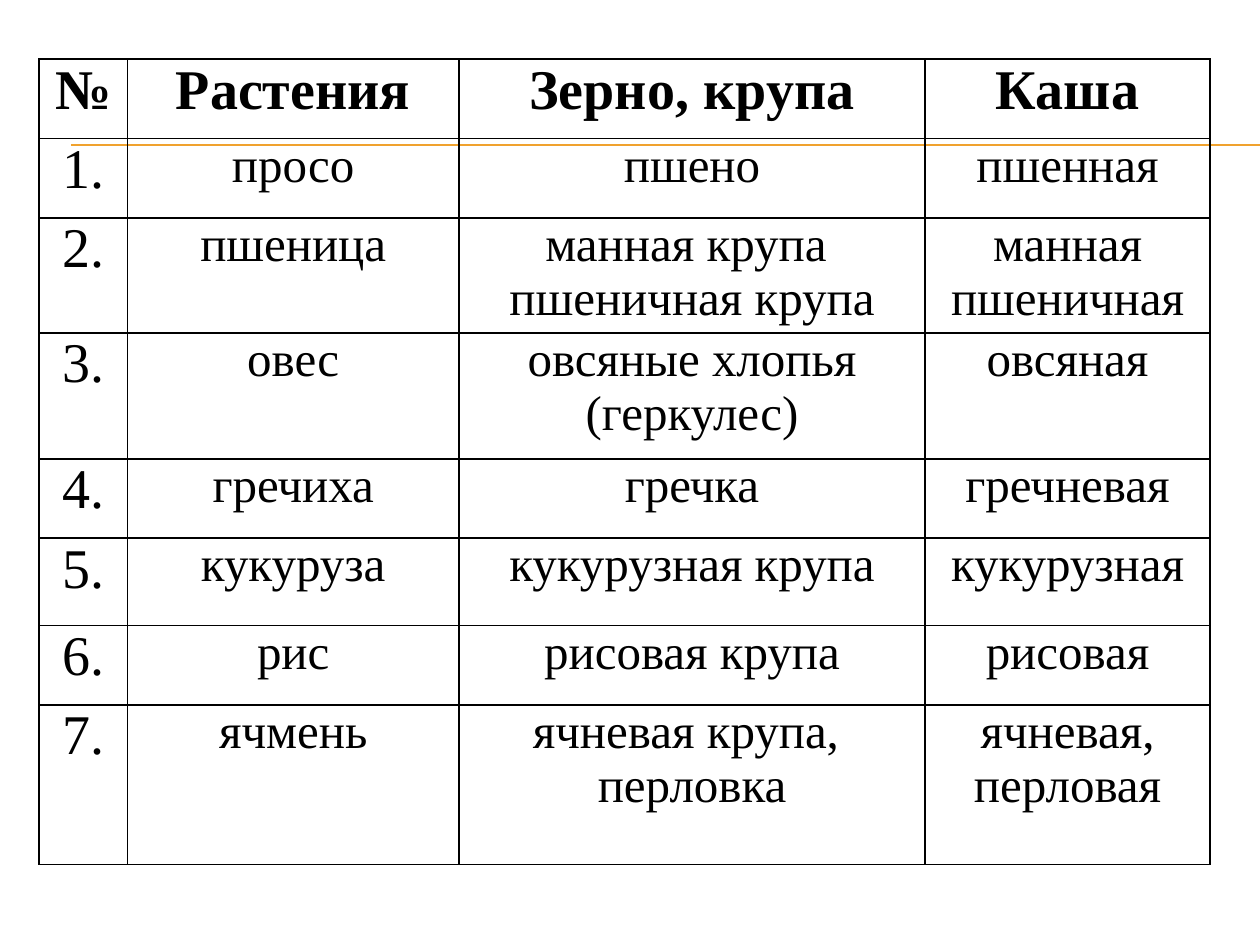
from lxml.etree import SubElement
from pptx import Presentation
from pptx.dml.color import RGBColor
from pptx.enum.shapes import MSO_CONNECTOR
from pptx.enum.text import PP_ALIGN
from pptx.oxml.ns import qn
from pptx.util import Cm, Pt

BLACK, ORANGE = "000000", "F0A22E"
COL_WIDTHS = [1.78, 6.68, 9.4, 5.74]
ROW_HEIGHTS = [1.6, 1.6, 2.32, 2.54, 1.6, 1.76, 1.6, 3.22]
HEADER = ["№", "Растения", "Зерно, крупа", "Каша"]
PLANTS = [
    ("просо", "пшено", "пшенная"),
    ("пшеница", "манная крупа \nпшеничная крупа", "манная\nпшеничная"),
    ("овес", "овсяные хлопья\n(геркулес)", "овсяная"),
    ("гречиха", "гречка", "гречневая"),
    ("кукуруза", "кукурузная крупа", "кукурузная"),
    ("рис", "рисовая крупа", "рисовая"),
    ("ячмень", "ячневая крупа, \nперловка", "ячневая,\nперловая"),
]


def color(hex_value):
    return RGBColor.from_string(hex_value)


def write_text(tf, text, size=28, bold=False, font="Times New Roman", fill=BLACK):
    """Write one centred paragraph for each line of the text."""
    for i, line in enumerate(text.split("\n")):
        p = tf.add_paragraph() if i else tf.paragraphs[0]
        p.alignment = PP_ALIGN.CENTER
        r = p.add_run()
        r.text = line
        r.font.name, r.font.size, r.font.bold = font, Pt(size), bold
        r.font.color.rgb = color(fill)


def set_borders(cell, hex_value=BLACK, width=1):
    tc_pr = cell._tc.get_or_add_tcPr()
    for side in ("lnL", "lnR", "lnT", "lnB"):
        ln = SubElement(tc_pr, qn(f"a:{side}"), w=str(Pt(width)))
        SubElement(SubElement(ln, qn("a:solidFill")), qn("a:srgbClr"), val=hex_value)


def add_rule(slide, left, top, width):
    """Draw the double decorative line."""
    for y in (top, top + 0.03):
        line = slide.shapes.add_connector(
            MSO_CONNECTOR.STRAIGHT, Cm(left), Cm(y), Cm(left + width), Cm(y))
        line.line.color.rgb = color(ORANGE)
        line.line.width = Pt(0.75)
        SubElement(line._element.spPr, qn("a:effectLst"))


def add_plant_table(slide, left, top):
    rows = [HEADER] + [(f"{n}.", *plant) for n, plant in enumerate(PLANTS, 1)]
    table = slide.shapes.add_table(
        len(rows), len(HEADER), Cm(left), Cm(top),
        Cm(sum(COL_WIDTHS)), Cm(sum(ROW_HEIGHTS))).table
    table.horz_banding = table.first_row = False
    for column, width in zip(table.columns, COL_WIDTHS):
        column.width = Cm(width)
    for row, height in zip(table.rows, ROW_HEIGHTS):
        row.height = Cm(height)
    for i, texts in enumerate(rows):
        for j, text in enumerate(texts):
            cell = table.cell(i, j)
            cell.margin_left = cell.margin_right = Cm(0.18)
            cell.margin_top = cell.margin_bottom = 0
            set_borders(cell)
            cell.fill.background()
            is_header = i == 0
            write_text(cell.text_frame, text, bold=is_header,
                       size=32 if is_header or j == 0 else 28)


def main():
    prs = Presentation()
    prs.slide_width, prs.slide_height = Cm(25.4), Cm(19.05)
    slide = prs.slides.add_slide(prs.slide_layouts[6])
    add_rule(slide, left=1.43, top=2.91, width=23.97)
    add_plant_table(slide, left=0.79, top=1.19)
    prs.save("out.pptx")


if __name__ == "__main__":
    main()
